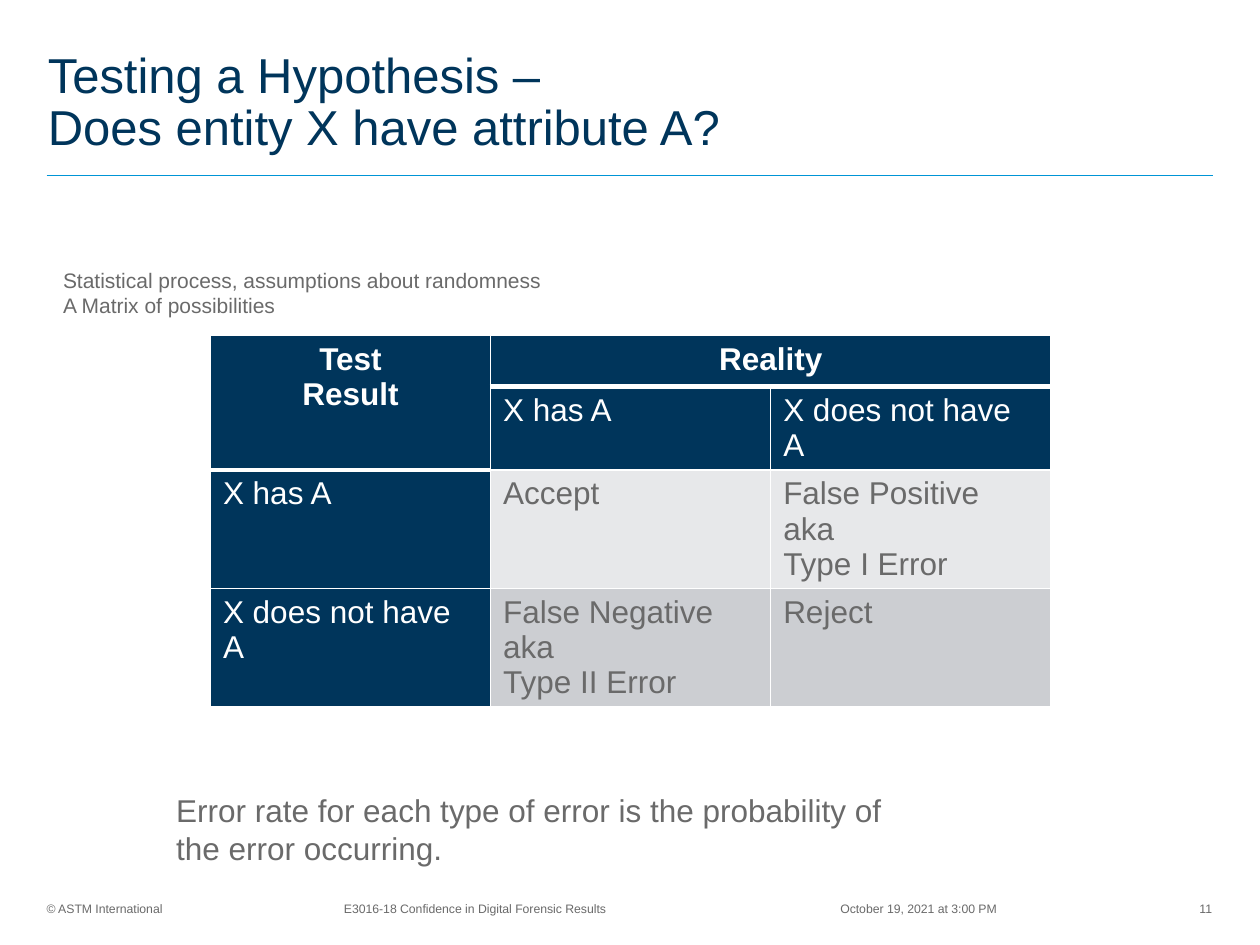
from lxml import etree
from pptx import Presentation
from pptx import util as u
from pptx.dml.color import RGBColor
from pptx.enum import shapes, text
from pptx.oxml import ns

NAVY = RGBColor(0x00, 0x35, 0x5B)
BLUE = RGBColor(0x00, 0x95, 0xD6)
GREY = RGBColor(0x6A, 0x6A, 0x6A)
WHITE = RGBColor(0xFF, 0xFF, 0xFF)
LIGHT = RGBColor(0xE7, 0xE8, 0xEA)
MEDIUM = RGBColor(0xCC, 0xCE, 0xD2)
LEFT, CENTER, RIGHT = text.PP_ALIGN.LEFT, text.PP_ALIGN.CENTER, text.PP_ALIGN.RIGHT
TOP, MIDDLE = text.MSO_ANCHOR.TOP, text.MSO_ANCHOR.MIDDLE

MATRIX = [
    ["Test\nResult", "Reality", ""],
    ["", "X has A", "X does not have A"],
    ["X has A", "Accept", "False Positive aka\nType I Error"],
    ["X does not have A", "False Negative aka\nType II Error", "Reject"],
]
ROW_HEIGHTS = [0.41, 0.66, 0.94, 0.94]
ROW_FILLS = [NAVY, NAVY, LIGHT, MEDIUM]
HEADER_EDGE = {(0, 0), (0, 1), (0, 2), (1, 0)}


def write_text(frame, content, size=18, color=GREY, bold=False, align=LEFT,
               spacing=None, plain_list=False):
    """Fill a text frame with one formatted paragraph per line of content."""
    for index, line in enumerate(content.split("\n")):
        paragraph = frame.paragraphs[0] if index == 0 else frame.add_paragraph()
        paragraph.text = line
        paragraph.alignment = align
        if spacing:
            paragraph.line_spacing = u.Pt(spacing)
        if plain_list:
            paragraph.space_before = u.Pt(0)
            properties = paragraph._p.get_or_add_pPr()
            properties.set("marL", "0")
            properties.set("indent", "0")
            etree.SubElement(properties, ns.qn("a:buNone"))
        for run in paragraph.runs:
            run.font.name = "Arial"
            run.font.size = u.Pt(size)
            run.font.bold = bold
            run.font.color.rgb = color


def set_border(cell, side, width):
    """Draw a white border on one side of a table cell."""
    line = etree.SubElement(cell._tc.get_or_add_tcPr(), ns.qn("a:ln" + side),
                            w=str(u.Pt(width)))
    fill = etree.SubElement(line, ns.qn("a:solidFill"))
    etree.SubElement(fill, ns.qn("a:srgbClr"), val=str(WHITE))


class SlideBuilder:
    """Hold the current slide and add styled elements to it."""

    def __init__(self, slide):
        self.slide = slide

    def prepare(self, shape, box, anchor, inset):
        """Place a text shape and set up its frame."""
        shape.left, shape.top, shape.width, shape.height = map(u.Inches, box)
        frame = shape.text_frame
        frame.word_wrap = True
        frame.auto_size = text.MSO_AUTO_SIZE.NONE
        frame.vertical_anchor = anchor
        if not inset:
            frame.margin_left = frame.margin_right = 0
            frame.margin_top = frame.margin_bottom = 0
        return frame

    def placeholder(self, number, content, box, anchor=TOP, **style):
        """Fill a template placeholder."""
        shape = self.slide.placeholders[number]
        write_text(self.prepare(shape, box, anchor, False), content, **style)

    def text_box(self, content, box, anchor=TOP, inset=False, **style):
        """Add a text box."""
        shape = self.slide.shapes.add_textbox(*map(u.Inches, box))
        write_text(self.prepare(shape, box, anchor, inset), content, **style)

    def rule(self, left, right, top):
        """Add a thin horizontal line."""
        line = self.slide.shapes.add_connector(
            shapes.MSO_CONNECTOR.STRAIGHT, u.Inches(left), u.Inches(top),
            u.Inches(right), u.Inches(top))
        line.line.color.rgb = BLUE
        line.line.width = u.Pt(0.5)
        etree.SubElement(line._element.spPr, ns.qn("a:effectLst"))

    def matrix(self, left, top, width):
        """Add the table of test results against reality."""
        table = self.slide.shapes.add_table(
            len(MATRIX), len(MATRIX[0]), u.Inches(left), u.Inches(top),
            u.Inches(width), u.Inches(sum(ROW_HEIGHTS))).table
        for row, height in zip(table.rows, ROW_HEIGHTS):
            row.height = u.Inches(height)
        table.cell(0, 0).merge(table.cell(1, 0))
        table.cell(0, 1).merge(table.cell(0, 2))
        for row, contents in enumerate(MATRIX):
            for column, content in enumerate(contents):
                cell = table.cell(row, column)
                heavy_top = (row - 1, column) in HEADER_EDGE
                heavy_bottom = (row, column) in HEADER_EDGE
                for side, heavy in zip("LRTB", (False, False, heavy_top, heavy_bottom)):
                    set_border(cell, side, 3 if heavy else 1)
                fill = NAVY if column == 0 else ROW_FILLS[row]
                cell.fill.solid()
                cell.fill.fore_color.rgb = fill
                if content:
                    write_text(cell.text_frame, content, bold=row == 0,
                               color=WHITE if fill == NAVY else GREY,
                               align=CENTER if row == 0 else LEFT)


def main():
    """Build and save the slide."""
    presentation = Presentation()
    presentation.slide_width, presentation.slide_height = u.Inches(10), u.Inches(7.5)
    builder = SlideBuilder(presentation.slides.add_slide(presentation.slide_layouts[1]))

    builder.rule(0.37, 9.63, 1.39)
    builder.placeholder(0, "Testing a Hypothesis –\vDoes entity X have attribute A?",
                        (0.38, 0.35, 7.71, 0.94), anchor=MIDDLE,
                        size=28, color=NAVY, spacing=30)
    builder.placeholder(1, "Statistical process, assumptions about randomness\n"
                        "A Matrix of possibilities",
                        (0.5, 2.12, 9, 1.17), size=12, plain_list=True)
    builder.matrix(1.67, 2.66, 6.67)
    builder.text_box("Error rate for each type of error is the probability of "
                     "the error occurring.", (1.3, 6.23, 5.96, 0.71), inset=True)
    for content, left, width, align in [
        ("© ASTM International", 0.37, 1.13, LEFT),
        ("E3016-18 Confidence in Digital Forensic Results", 2.05, 3.44, CENTER),
        ("October 19, 2021 at 3:00 PM", 5.74, 3.1, CENTER),
        ("11", 9.13, 0.49, RIGHT),
    ]:
        builder.text_box(content, (left, 7.15, width, 0.13), anchor=MIDDLE,
                         size=7, align=align)
    presentation.save("out.pptx")


if __name__ == "__main__":
    main()
